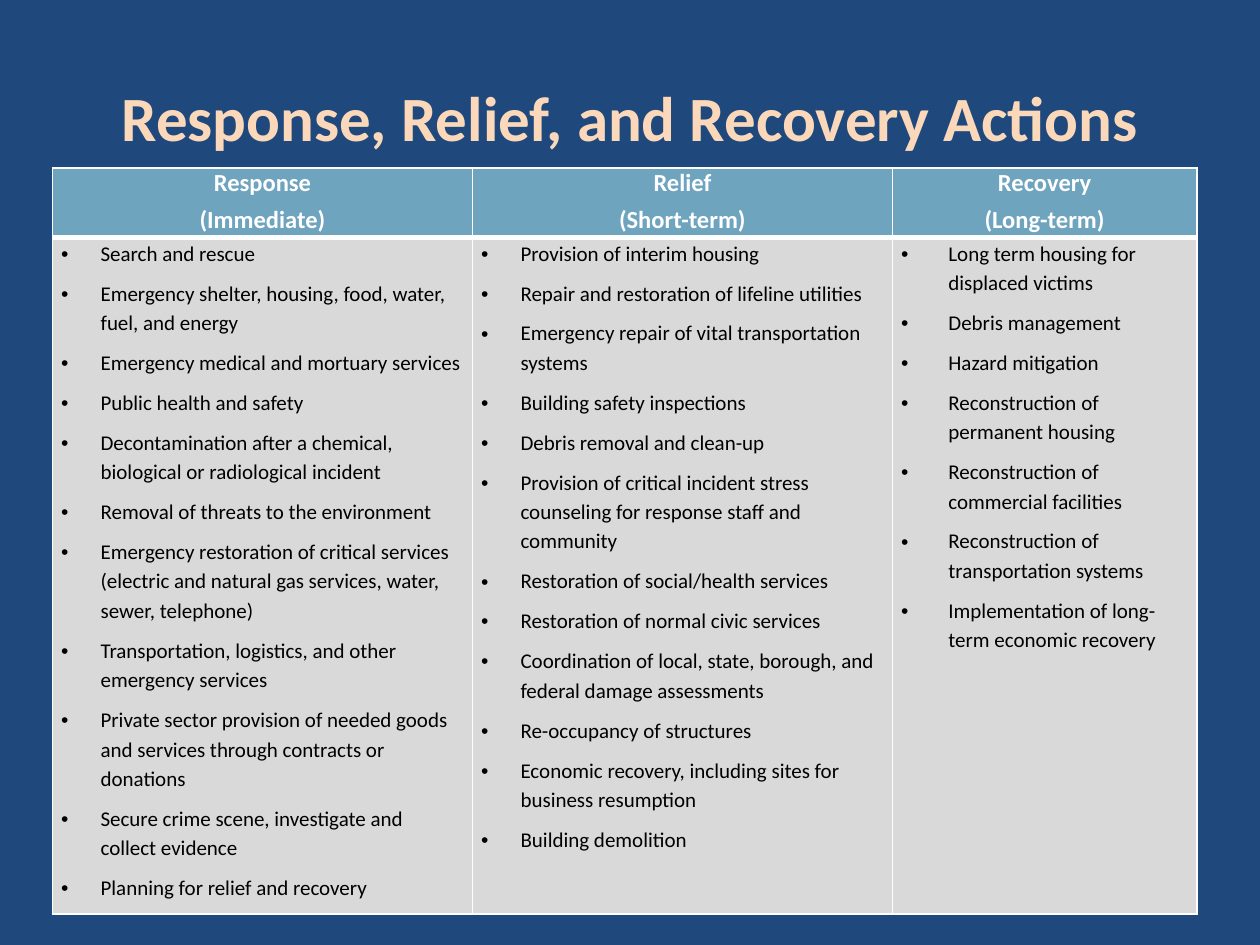
from lxml.etree import SubElement, Element
from pptx import Presentation
from pptx.dml.color import RGBColor as RGB
from pptx.enum.text import MSO_ANCHOR as ANCHOR, PP_ALIGN as ALIGN
from pptx.oxml.ns import qn
from pptx.util import Pt

# Content
TITLE = "Response, Relief, and Recovery Actions"
PHASES = [
    ("Response", "(Immediate)", [
        "Search and rescue",
        "Emergency shelter, housing, food, water, fuel, and energy",
        "Emergency medical and mortuary services",
        "Public health and safety",
        "Decontamination after a chemical, biological or radiological incident",
        "Removal of threats to the environment",
        "Emergency restoration of critical services (electric and natural gas "
        "services, water, sewer, telephone)",
        "Transportation, logistics, and other emergency services",
        "Private sector provision of needed goods and services through "
        "contracts or donations",
        "Secure crime scene, investigate and collect evidence",
        "Planning for relief and recovery",
    ]),
    ("Relief", "(Short-term)", [
        "Provision of interim housing",
        "Repair and restoration of lifeline utilities",
        "Emergency repair of vital transportation systems",
        "Building safety inspections",
        "Debris removal and clean-up",
        "Provision of critical incident stress counseling for response staff "
        "and community",
        "Restoration of social/health services",
        "Restoration of normal civic services",
        "Coordination of local, state, borough, and federal damage assessments",
        "Re-occupancy of structures",
        "Economic recovery, including sites for business resumption",
        "Building demolition",
    ]),
    ("Recovery", "(Long-term)", [
        "Long term housing for displaced victims",
        "Debris management",
        "Hazard mitigation",
        "Reconstruction of permanent housing",
        "Reconstruction of commercial facilities",
        "Reconstruction of transportation systems",
        "Implementation of long-term economic recovery",
    ]),
]

# Theme and layout, lengths in points
THEME = {
    "font": "Calibri", "background": "1F497D", "title": "FCD8BA",
    "header": "93CDDD", "header_alpha": 69, "body": "D9D9D9",
    "header_text": "FFFFFF", "body_text": "000000", "border": "FFFFFF",
    "title_size": 36, "header_size": 14, "body_size": 12,
}
COL_WIDTHS = [240, 240, 174]
INDENTS = [22.5, 22.5, 27]
ROW_HEIGHTS = [39.6, 386.6]
THIN, THICK = 1, 3


def style_text(p, size, color, bold=False):
    for r in p.runs:
        r.font.name = THEME["font"]
        r.font.size = Pt(size)
        r.font.bold = bold
        r.font.color.rgb = RGB.from_string(color)


def space(p, gap):
    p.space_before = p.space_after = Pt(gap)


def add_bullet(p, indent):
    pPr = p._p.get_or_add_pPr()
    pPr.set("marL", str(Pt(indent)))
    pPr.set("indent", str(-Pt(indent)))
    SubElement(pPr, qn("a:buFont")).set("typeface", "Arial")
    SubElement(pPr, qn("a:buChar")).set("char", "•")


def style_cell(cell, fill, top, bottom, alpha=None):
    cell.margin_left = cell.margin_right = Pt(5)
    cell.margin_top = cell.margin_bottom = Pt(0)
    cell.vertical_anchor = ANCHOR.TOP
    cell.fill.solid()
    cell.fill.fore_color.rgb = RGB.from_string(fill)
    tcPr = cell._tc.get_or_add_tcPr()
    if alpha:
        color = tcPr.find(".//" + qn("a:srgbClr"))
        SubElement(color, qn("a:alpha")).set("val", str(alpha * 1000))
    # Borders come before the fill
    sides = [("L", THIN), ("R", THIN), ("T", top), ("B", bottom)]
    for i, (side, width) in enumerate(sides):
        ln = Element(qn("a:ln" + side), w=str(Pt(width)))
        solid = SubElement(ln, qn("a:solidFill"))
        SubElement(solid, qn("a:srgbClr")).set("val", THEME["border"])
        tcPr.insert(i, ln)


prs = Presentation()
prs.slide_width, prs.slide_height = Pt(720), Pt(540)
s = prs.slides.add_slide(prs.slide_layouts[6])
s.background.fill.solid()
s.background.fill.fore_color.rgb = RGB.from_string(THEME["background"])

# Title
tf = s.shapes.add_textbox(Pt(36), Pt(21.6), Pt(648), Pt(90)).text_frame
tf.word_wrap = True
tf.vertical_anchor = ANCHOR.MIDDLE
tf.text = TITLE
p = tf.paragraphs[0]
p.alignment = ALIGN.CENTER
style_text(p, THEME["title_size"], THEME["title"], bold=True)

# Table of phases
table = s.shapes.add_table(2, len(PHASES), Pt(30), Pt(96), Pt(sum(COL_WIDTHS)),
                           Pt(sum(ROW_HEIGHTS))).table
table.first_row = table.horz_banding = False
for row, height in zip(table.rows, ROW_HEIGHTS):
    row.height = Pt(height)

for col, (name, term, actions) in enumerate(PHASES):
    table.columns[col].width = Pt(COL_WIDTHS[col])
    header, body = table.cell(0, col), table.cell(1, col)

    # Header cell
    style_cell(header, THEME["header"], THIN, THICK, THEME["header_alpha"])
    header.text_frame.text = f"{name}\n{term}"
    for p in header.text_frame.paragraphs:
        p.alignment = ALIGN.CENTER
        space(p, 2)
        style_text(p, THEME["header_size"], THEME["header_text"], bold=True)

    # Bulleted actions
    style_cell(body, THEME["body"], THICK, THIN)
    body.text_frame.text = "\n".join(actions)
    for p in body.text_frame.paragraphs:
        p.line_spacing = 1.15
        space(p, 3)
        add_bullet(p, INDENTS[col])
        style_text(p, THEME["body_size"], THEME["body_text"])

prs.save("out.pptx")
